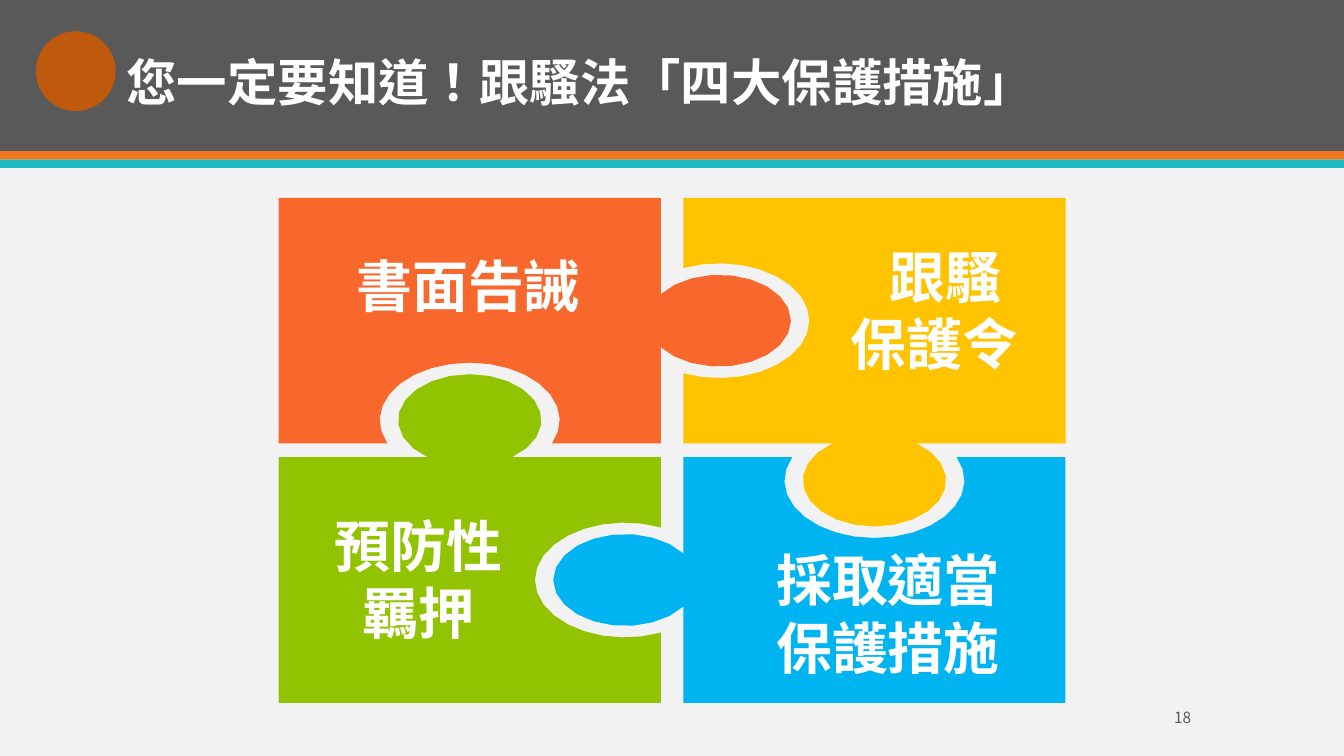
import math
from dataclasses import dataclass

import pptx
import pptx.dml.color
import pptx.enum.shapes
import pptx.enum.text
import pptx.oxml
import pptx.oxml.ns
import pptx.util

Pt = pptx.util.Pt
Shape = pptx.enum.shapes.MSO_SHAPE
Align = pptx.enum.text.PP_ALIGN
Anchor = pptx.enum.text.MSO_ANCHOR
TOP, RIGHT, BOTTOM, LEFT = range(4)


@dataclass(frozen=True)
class Theme:
    background: str = "F2F2F2"
    header: str = "595959"
    orange_stripe: str = "EF7920"
    teal_stripe: str = "1EB8C1"
    badge: str = "BE590E"
    white: str = "FFFFFF"
    orange: str = "F8682C"
    yellow: str = "FFC300"
    blue: str = "00B4F1"
    green: str = "91C300"
    font: str = "Noto Sans CJK SC"
    number_font: str = "Noto Sans CJK TC"
    language: str = "zh-TW"
    title_size: int = 36
    label_size: int = 40
    label_line: int = 48
    number_size: int = 11


@dataclass(frozen=True)
class Puzzle:
    left: float = 199.1
    top: float = 141.4
    width: float = 272.9
    height: float = 175.4
    gap_x: float = 16.2
    gap_y: float = 9.8
    knob: tuple = (51.2, 32.8)
    socket: tuple = (64.3, 41)
    reach: tuple = (41.8, 26.5)
    steps: int = 18

    def outline(self, column, row, knob_side):
        left = self.left + column * (self.width + self.gap_x)
        top = self.top + row * (self.height + self.gap_y)
        right, bottom = left + self.width, top + self.height
        corners = [(left, top), (right, top), (right, bottom), (left, bottom)]
        points = []
        for side, corner in enumerate(corners):
            points.append(corner)
            following = corners[(side + 1) % 4]
            middle = [(a + b) / 2 for a, b in zip(corner, following)]
            if side == knob_side:
                points += self.arc(middle, side, self.knob, 1)
            elif side == (knob_side + 1) % 4:
                points += self.arc(middle, side, self.socket, -1)
        return points

    def arc(self, middle, side, radii, outward):
        normal = [(0, -1), (1, 0), (0, 1), (-1, 0)][side]
        tangent = (-normal[1], normal[0])
        axis = 0 if side in (LEFT, RIGHT) else 1
        gap = (self.gap_x, self.gap_y)[axis]
        offset = self.reach[axis] - (gap if outward < 0 else 0)
        depth, breadth = radii[axis], radii[1 - axis]
        limit = math.acos(-offset / depth)
        for step in range(self.steps + 1):
            angle = limit * (2 * step / self.steps - 1)
            out = outward * (offset + depth * math.cos(angle))
            along = breadth * math.sin(angle)
            yield tuple(m + n * out + t * along
                        for m, n, t in zip(middle, normal, tangent))


class SlideBuilder:
    def __init__(self, presentation, theme):
        self.theme = theme
        self.slide = presentation.slides.add_slide(presentation.slide_layouts[5])
        self.shapes = self.slide.shapes
        self.paint(self.slide.background, theme.background)

    def paint(self, target, color):
        target.fill.solid()
        target.fill.fore_color.rgb = pptx.dml.color.RGBColor.from_string(color)

    def finish(self, shape, color):
        shape.shadow.inherit = False
        self.paint(shape, color)
        shape.line.fill.background()

    def preset(self, kind, box, color):
        self.finish(self.shapes.add_shape(kind, *map(Pt, box)), color)

    def piece(self, points, color):
        start, *rest = [(Pt(x), Pt(y)) for x, y in points]
        builder = self.shapes.build_freeform(*start)
        builder.add_line_segments(rest, close=True)
        self.finish(builder.convert_to_shape(), color)

    def style(self, paragraph, size, color, align, bold=True, name=None):
        name = name or self.theme.font
        font = paragraph.font
        font.size, font.bold, font.name = Pt(size), bold, name
        font.color.rgb = pptx.dml.color.RGBColor.from_string(color)
        paragraph.alignment = align
        defaults = paragraph._p.pPr.find(pptx.oxml.ns.qn("a:defRPr"))
        defaults.set("lang", self.theme.language)
        east_asian = pptx.oxml.parse_xml(
            f'<a:ea {pptx.oxml.ns.nsdecls("a")} typeface="{name}"/>')
        defaults.append(east_asian)

    def title(self, text, box):
        title = self.shapes.title
        title.left, title.top, title.width, title.height = map(Pt, box)
        self.shapes._spTree.append(title._element)
        frame = title.text_frame
        frame.text = text
        frame.word_wrap = True
        frame.auto_size = pptx.enum.text.MSO_AUTO_SIZE.NONE
        frame.vertical_anchor = Anchor.TOP
        frame.margin_left = frame.margin_top = 0
        self.style(frame.paragraphs[0], self.theme.title_size,
                   self.theme.white, Align.LEFT)

    def label(self, lines, box):
        frame = self.shapes.add_textbox(*map(Pt, box)).text_frame
        frame.word_wrap = True
        frame.text = "\n".join(text for text, _ in lines)
        for paragraph, (_, align) in zip(frame.paragraphs, lines):
            self.style(paragraph, self.theme.label_size, self.theme.white, align)
            paragraph.line_spacing = Pt(self.theme.label_line)

    def page_number(self, text, box):
        frame = self.shapes.add_textbox(*map(Pt, box)).text_frame
        frame.word_wrap = True
        frame.vertical_anchor = Anchor.MIDDLE
        frame.text = text
        self.style(frame.paragraphs[0], self.theme.number_size, self.theme.header,
                   Align.RIGHT, False, self.theme.number_font)


def main():
    presentation = pptx.Presentation()
    presentation.slide_width, presentation.slide_height = Pt(960), Pt(540)
    theme, puzzle = Theme(), Puzzle()
    builder = SlideBuilder(presentation, theme)

    for top, height, color in [(0, 108, theme.header),
                               (108, 6, theme.orange_stripe),
                               (114, 6, theme.teal_stripe)]:
        builder.preset(Shape.RECTANGLE, (0, top, 960, height), color)
    builder.preset(Shape.OVAL, (25.6, 22.3, 57, 57), theme.badge)
    builder.title("您一定要知道！跟騷法「四大保護措施」", (90.3, 36.5, 660, 50))

    measures = [
        (1, 1, LEFT, theme.blue, (542, 386.4, 184.5, 104),
         [("採取適當", Align.CENTER), ("保護措施", Align.CENTER)]),
        (0, 0, RIGHT, theme.orange, (247.3, 176, 206, 55),
         [("書面告誡", Align.LEFT)]),
        (1, 0, BOTTOM, theme.yellow, (600.5, 169.6, 150, 104),
         [("跟騷", Align.CENTER), ("保護令", Align.LEFT)]),
        (0, 1, TOP, theme.green, (224, 361.8, 150, 104),
         [("預防性", Align.CENTER), ("羈押", Align.CENTER)]),
    ]
    for column, row, knob_side, color, _, _ in measures:
        builder.piece(puzzle.outline(column, row, knob_side), color)
    for *_, box, lines in measures:
        builder.label(lines, box)

    builder.page_number("18", (750, 501.5, 108, 21.6))
    presentation.save("out.pptx")


if __name__ == "__main__":
    main()
